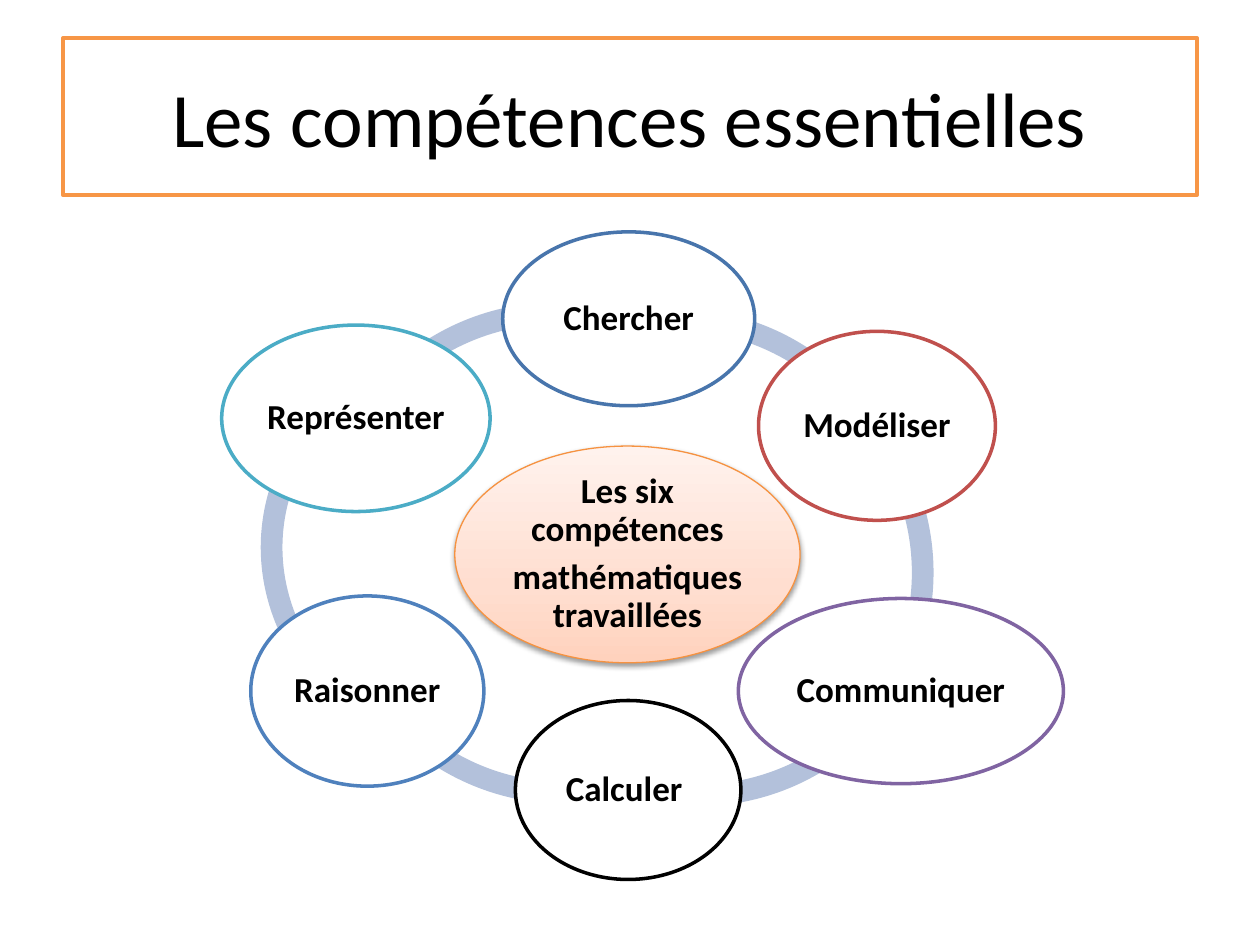
from typing import NamedTuple

from pptx import Presentation
from pptx.dml.color import RGBColor
from pptx.enum.shapes import MSO_SHAPE
from pptx.enum.text import MSO_ANCHOR, PP_ALIGN
from pptx.oxml import parse_xml
from pptx.oxml.ns import nsdecls
from pptx.util import Inches, Pt

RECT, OVAL, ARC = MSO_SHAPE.RECTANGLE, MSO_SHAPE.OVAL, MSO_SHAPE.BLOCK_ARC
MIDDLE, CENTER = MSO_ANCHOR.MIDDLE, PP_ALIGN.CENTER
FONT, BLACK, WHITE, RING = "Calibri", "000000", "FFFFFF", "B3C1DB"
THICK = 0.045
INSET = 0.03
STOPS = ((0, "FFD2BD"), (35, "FFDED0"), (100, "FFF2ED"))


class Box(NamedTuple):
    left: float
    top: float
    width: float
    height: float


class Arc(NamedTuple):
    box: Box
    start: float
    end: float


class Skill(NamedTuple):
    name: str
    box: Box
    line: str


ARCS = (
    Arc(Box(2.5, 2.4, 3.83, 3.83), 212.04, 287.79),
    Arc(Box(2.07, 2.43, 4.66, 3.83), 142.37, 213.1),
    Arc(Box(2.57, 2.55, 3.83, 3.83), 74.5, 147.18),
    Arc(Box(3.62, 2.57, 3.83, 3.83), 32.07, 107.18),
    Arc(Box(3.58, 2.63, 3.83, 3.83), 321.33, 29.76),
    Arc(Box(3.45, 2.45, 3.83, 3.83), 258.23, 328.36),
)
SKILLS = (
    Skill("Chercher", Box(3.99, 1.84, 2, 1.38), "4875AC"),
    Skill("Modéliser", Box(6.02, 2.63, 1.88, 1.5), "C0504D"),
    Skill("Communiquer", Box(5.86, 4.75, 2.58, 1.47), "8064A2"),
    Skill("Calculer ", Box(4.09, 5.56, 1.79, 1.42), BLACK),
    Skill("Raisonner", Box(1.99, 4.73, 1.85, 1.51), "4F81BD"),
    Skill("Représenter", Box(1.76, 2.58, 2.13, 1.48), "4BACC6"),
)


def color(code: str) -> RGBColor:
    """Turn a hex string into a colour."""
    return RGBColor.from_string(code)


def draw(slide, kind, box: Box, fill: str, line: str = "", width: float = 2):
    """Add a flat shape, outlined when a line colour is given."""
    shape = slide.shapes.add_shape(kind, *map(Inches, box))
    shape.shadow.inherit = False
    shape.fill.solid()
    shape.fill.fore_color.rgb = color(fill)
    if line:
        shape.line.color.rgb = color(line)
        shape.line.width = Pt(width)
    else:
        shape.line.fill.background()
    return shape


def write(shape, text: str, size: float, bold: bool = False) -> None:
    """Set centred black text in a shape."""
    frame = shape.text_frame
    frame.text = text
    frame.word_wrap = True
    frame.vertical_anchor = MIDDLE
    for para in frame.paragraphs:
        para.alignment = CENTER
        for run in para.runs:
            run.font.name, run.font.size, run.font.bold = FONT, Pt(size), bold
            run.font.color.rgb = color(BLACK)


def label(shape, text: str, after: float) -> None:
    """Write a bold bubble label with tight spacing."""
    write(shape, text, 20, True)
    frame = shape.text_frame
    frame.margin_left = frame.margin_right = Inches(INSET)
    frame.margin_top = frame.margin_bottom = Inches(INSET)
    for para in frame.paragraphs:
        para.line_spacing = 0.9
        para.space_after = Pt(after)


def bend(slide, arc: Arc) -> None:
    """Draw one part of the ring, with its angles in degrees."""
    shape = draw(slide, ARC, arc.box, RING)
    for spot, value in enumerate((arc.start * 0.6, arc.end * 0.6, THICK)):
        shape.adjustments[spot] = value


def shade(shape) -> None:
    """Give a shape an upward gradient and a soft shadow."""
    props = shape._element.spPr
    stops = "".join(
        f'<a:gs pos="{spot * 1000}"><a:srgbClr val="{code}"/></a:gs>'
        for spot, code in STOPS
    )
    blend = parse_xml(
        f'<a:gradFill {nsdecls("a")} rotWithShape="1"><a:gsLst>{stops}</a:gsLst>'
        '<a:lin ang="16200000" scaled="0"/></a:gradFill>'
    )
    solid = props.find("{*}solidFill")
    props.replace(solid, blend)
    props.find("{*}effectLst").append(parse_xml(
        f'<a:outerShdw {nsdecls("a")} blurRad="{Pt(3.1)}" dist="{Pt(1.6)}" '
        f'dir="5400000" rotWithShape="0"><a:srgbClr val="{BLACK}">'
        '<a:alpha val="38000"/></a:srgbClr></a:outerShdw>'
    ))


def main() -> None:
    """Build and save the slide."""
    deck = Presentation()
    deck.slide_width, deck.slide_height = Inches(10), Inches(7.5)
    slide = deck.slides.add_slide(deck.slide_layouts[6])
    title = draw(slide, RECT, Box(0.5, 0.3, 9, 1.25), WHITE, "F79646")
    write(title, "Les compétences essentielles", 44)
    for arc in ARCS:
        bend(slide, arc)
    core = draw(slide, OVAL, Box(3.61, 3.54, 2.74, 1.72), WHITE, "F69240", 0.75)
    shade(core)
    label(core, "Les six compétences\nmathématiques travaillées", 6)
    for skill in SKILLS:
        label(draw(slide, OVAL, skill.box, WHITE, skill.line), skill.name, 7)
    deck.save("out.pptx")


if __name__ == "__main__":
    main()
